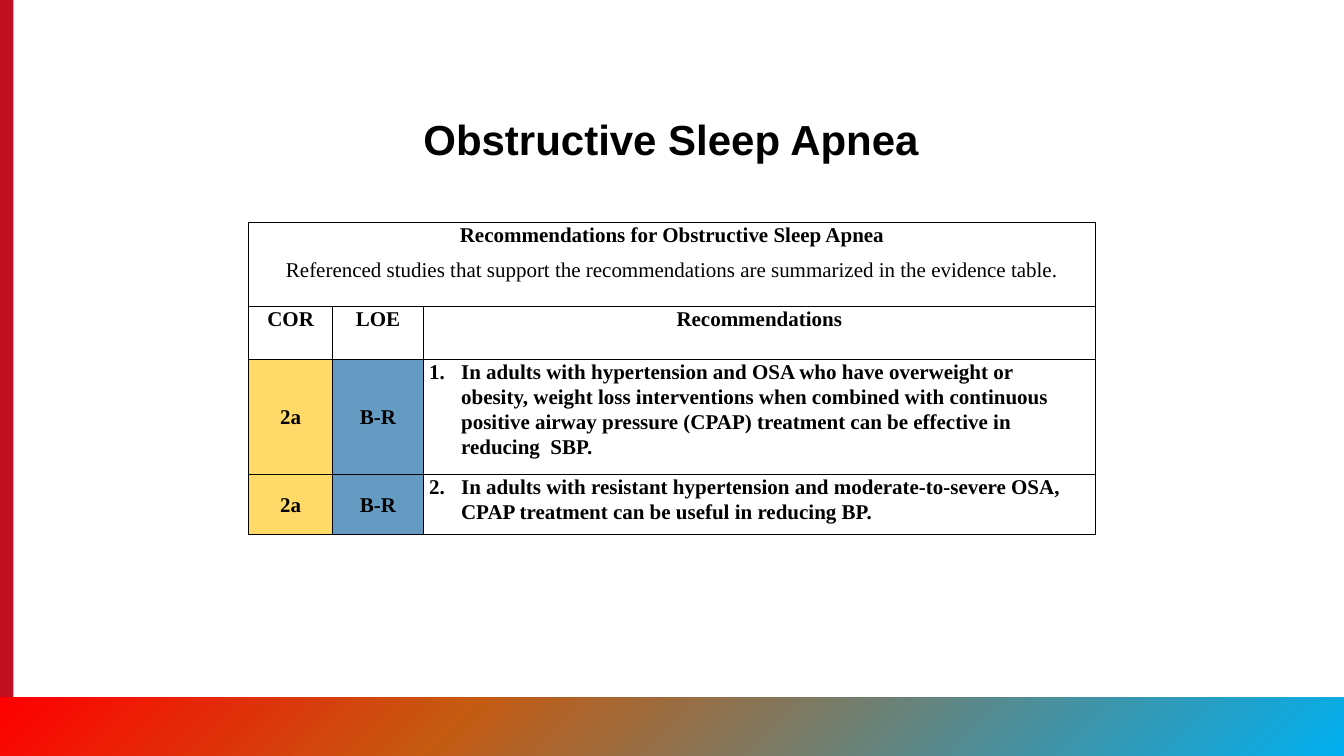
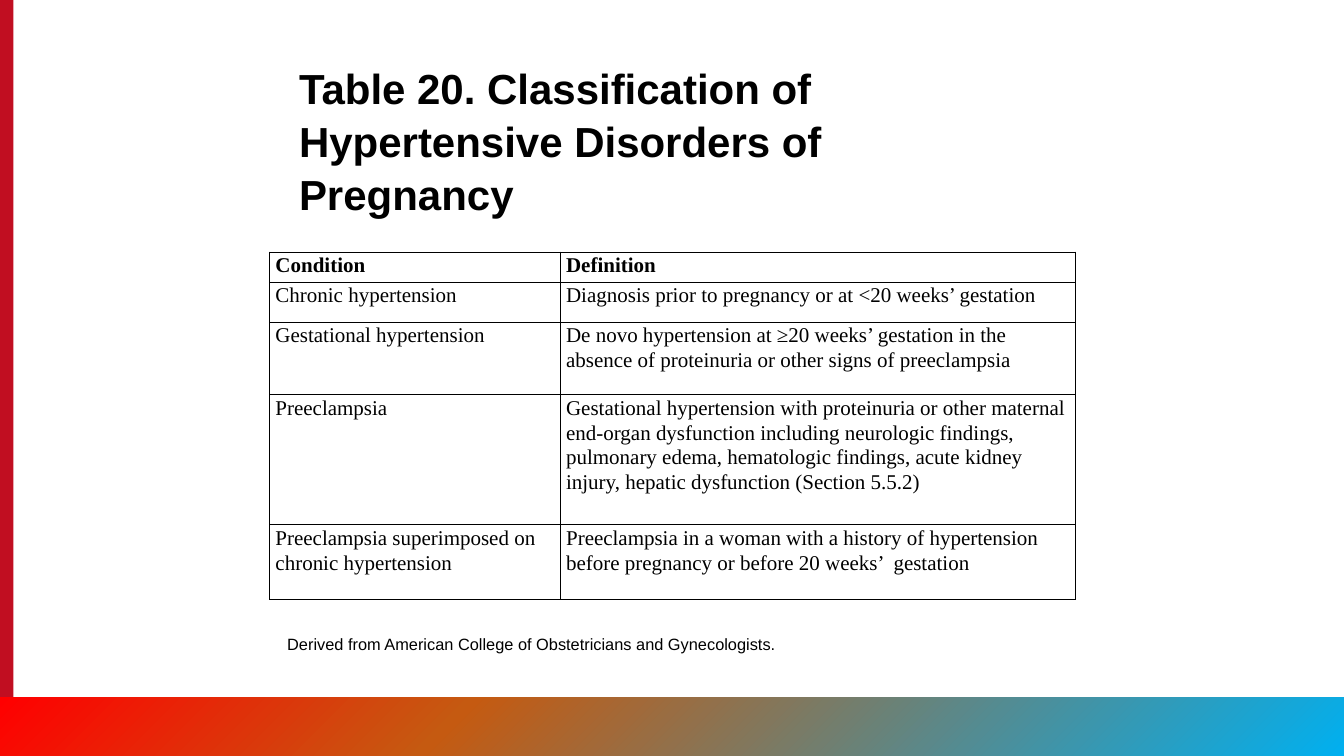
from copy import deepcopy

from lxml import etree
from pptx import Presentation
from pptx.dml.color import RGBColor
from pptx.enum.shapes import MSO_SHAPE
from pptx.enum.text import MSO_ANCHOR, MSO_AUTO_SIZE, PP_ALIGN
from pptx.oxml.ns import qn
from pptx.util import Inches, Pt

# Slide grid: 16 columns by 9 rows
COLUMNS, ROWS = 16, 9
UNIT = Inches(1)

BLACK = RGBColor(0x00, 0x00, 0x00)
WHITE = RGBColor(0xFF, 0xFF, 0xFF)
CRIMSON = RGBColor(0xC1, 0x0E, 0x21)
BLUE = RGBColor(0x00, 0xB0, 0xF0)
ORANGE = RGBColor(0xC5, 0x5A, 0x11)
RED = RGBColor(0xFF, 0x00, 0x00)
CLASS_YELLOW = RGBColor(0xFF, 0xDA, 0x68)
LEVEL_BLUE = RGBColor(0x65, 0x9B, 0xC2)

HEADING_FONT = "Arial"
TABLE_FONT = "Times New Roman"
TITLE_ONLY = 5
RECTANGLE = MSO_SHAPE.RECTANGLE
LEFT, CENTER = PP_ALIGN.LEFT, PP_ALIGN.CENTER
TOP, MIDDLE, BOTTOM = MSO_ANCHOR.TOP, MSO_ANCHOR.MIDDLE, MSO_ANCHOR.BOTTOM
NO_AUTOFIT, GROW = MSO_AUTO_SIZE.NONE, MSO_AUTO_SIZE.SHAPE_TO_FIT_TEXT

BAND_BOX = (0, 8.3, COLUMNS, 0.7)
BAR_BOX = (0, 0, 0.16, ROWS)


def grid(box):
    """Turn columns and rows into slide lengths."""
    return [int(length * UNIT) for length in box]


def write(frame, text, size=18, font=TABLE_FONT, bold=False, align=LEFT,
          spacing=None, after=None, number=None, extra=False):
    """Write one paragraph; extra adds it below the ones already there."""
    paragraph = frame.add_paragraph() if extra else frame.paragraphs[0]
    if number:
        properties = paragraph._p.get_or_add_pPr()
        properties.set("marL", str(Inches(0.38)))
        properties.set("indent", str(-Inches(0.38)))
        etree.SubElement(properties, qn("a:buAutoNum"),
                         type="arabicPeriod", startAt=str(number))
    paragraph.alignment = align
    if spacing:
        paragraph.line_spacing = spacing
    if after:
        paragraph.space_after = Pt(after)
    run = paragraph.add_run()
    run.text = text
    run.font.size = Pt(size)
    run.font.name = font
    run.font.bold = bold
    run.font.color.rgb = BLACK


# Shared bands, kept on the layout
def add_bands(layout, slide):
    bar = slide.shapes.add_shape(RECTANGLE, *grid(BAR_BOX))
    bar.fill.solid()
    bar.fill.fore_color.rgb = CRIMSON

    band = slide.shapes.add_shape(RECTANGLE, *grid(BAND_BOX))
    band.rotation = 180
    band.fill.gradient()
    band.fill.gradient_angle = 315
    stop_list = band.element.find(".//" + qn("a:gsLst"))
    stop_list.append(deepcopy(stop_list[0]))
    stops = ((0, BLUE), (0.66, ORANGE), (1, RED))
    for stop, (position, color) in zip(band.fill.gradient_stops, stops):
        stop.position = position
        stop.color.rgb = color

    for index, shape in enumerate((bar, band)):
        shape.shadow.inherit = False
        shape.line.fill.background()
        layout.shapes.element.insert(2 + index, shape.element)


def set_title(slide, text, box):
    title = slide.shapes.title
    title.left, title.top, title.width, title.height = grid(box)
    frame = title.text_frame
    frame.word_wrap = True
    frame.auto_size = NO_AUTOFIT
    frame.vertical_anchor = BOTTOM
    write(frame, text, size=36, font=HEADING_FONT, bold=True, spacing=1.05)


def add_borders(cell):
    properties = cell._tc.get_or_add_tcPr()
    for side in ("lnL", "lnR", "lnT", "lnB"):
        line = etree.SubElement(properties, qn("a:" + side), w=str(Pt(1)))
        fill = etree.SubElement(line, qn("a:solidFill"))
        etree.SubElement(fill, qn("a:srgbClr"), val=str(BLACK))


# Ruled table with plain white cells
def add_table(slide, left, top, widths, heights):
    box = grid((left, top, sum(widths), sum(heights)))
    table = slide.shapes.add_table(len(heights), len(widths), *box).table
    table.first_row = table.horz_banding = False
    for column, width in zip(table.columns, widths):
        column.width = int(width * UNIT)
    for row, height in zip(table.rows, heights):
        row.height = int(height * UNIT)
    for cell in table.iter_cells():
        add_borders(cell)
        cell.margin_left = cell.margin_right = Inches(0.07)
        cell.margin_top = cell.margin_bottom = 0
        cell.fill.solid()
        cell.fill.fore_color.rgb = WHITE
    return table


def write_cell(cell, text, fill=None, anchor=TOP, **text_format):
    cell.vertical_anchor = anchor
    if fill:
        cell.fill.fore_color.rgb = fill
    write(cell.text_frame, text, spacing=1.07, after=8, **text_format)


def add_recommendations(slide, left, top):
    table = add_table(slide, left, top, (1, 1.08, 8), (1, 0.63, 1.37, 0.71))
    # Heading across all columns
    heading = table.cell(0, 0)
    heading.merge(table.cell(0, 2))
    write_cell(heading, "Recommendations for Obstructive Sleep Apnea",
               bold=True, align=CENTER)
    write_cell(heading, "Referenced studies that support the recommendations "
               "are summarized in the evidence table.",
               align=CENTER, extra=True)
    for column, label in enumerate(("COR", "LOE", "Recommendations")):
        write_cell(table.cell(1, column), label, bold=True, align=CENTER)
    # Graded, numbered recommendations
    advice = (
        "In adults with hypertension and OSA who have overweight or  obesity, "
        "weight loss interventions when combined with continuous positive "
        "airway pressure (CPAP) treatment can be effective in reducing  SBP.",
        "In adults with resistant hypertension and moderate-to-severe OSA, "
        "CPAP treatment can be useful in reducing BP.",
    )
    grades = (("2a", CLASS_YELLOW), ("B-R", LEVEL_BLUE))
    for number, text in enumerate(advice, start=1):
        row = number + 1
        for column, (grade, color) in enumerate(grades):
            write_cell(table.cell(row, column), grade, fill=color,
                       anchor=MIDDLE, bold=True, align=CENTER)
        write_cell(table.cell(row, 2), text, bold=True, number=number)


def add_classification(slide, left, top):
    rows = (
        ("Condition", "Definition"),
        ("Chronic hypertension",
         "Diagnosis prior to pregnancy or at <20 weeks’ gestation"),
        ("Gestational hypertension",
         "De novo hypertension at ≥20 weeks’ gestation in the absence of "
         "proteinuria or other signs of preeclampsia"),
        ("Preeclampsia",
         "Gestational hypertension with proteinuria or other maternal "
         "end-organ dysfunction including neurologic findings, pulmonary "
         "edema, hematologic findings, acute kidney injury, hepatic "
         "dysfunction (Section 5.5.2)"),
        ("Preeclampsia superimposed on chronic hypertension",
         "Preeclampsia in a woman with a history of hypertension before "
         "pregnancy or before 20 weeks’  gestation"),
    )
    table = add_table(slide, left, top, (3.46, 6.13),
                      (0.36, 0.48, 0.86, 1.55, 0.89))
    for row, texts in enumerate(rows):
        for column, text in enumerate(texts):
            write_cell(table.cell(row, column), text, bold=row == 0)


def add_source_note(slide, text, box):
    frame = slide.shapes.add_textbox(*grid(box)).text_frame
    frame.word_wrap = True
    frame.auto_size = GROW
    write(frame, text, size=14, font=HEADING_FONT)


def main():
    presentation = Presentation()
    presentation.slide_width, presentation.slide_height = grid((COLUMNS, ROWS))
    layout = presentation.slide_layouts[TITLE_ONLY]
    apnea, pregnancy = [presentation.slides.add_slide(layout)
                        for _ in range(2)]
    add_bands(layout, apnea)

    set_title(apnea, "Obstructive Sleep Apnea", (4.94, 1.33, 6.13, 0.67))
    add_recommendations(apnea, 2.96, 2.65)

    set_title(pregnancy, "Table 20. Classification of Hypertensive Disorders "
              "of Pregnancy", (3.46, 1.33, 9.08, 1.33))
    add_classification(pregnancy, 3.21, 3)
    add_source_note(pregnancy, "Derived from American College of "
                    "Obstetricians and Gynecologists.",
                    (3.32, 7.5, 9.08, 0.34))
    presentation.save("out.pptx")


if __name__ == "__main__":
    main()
